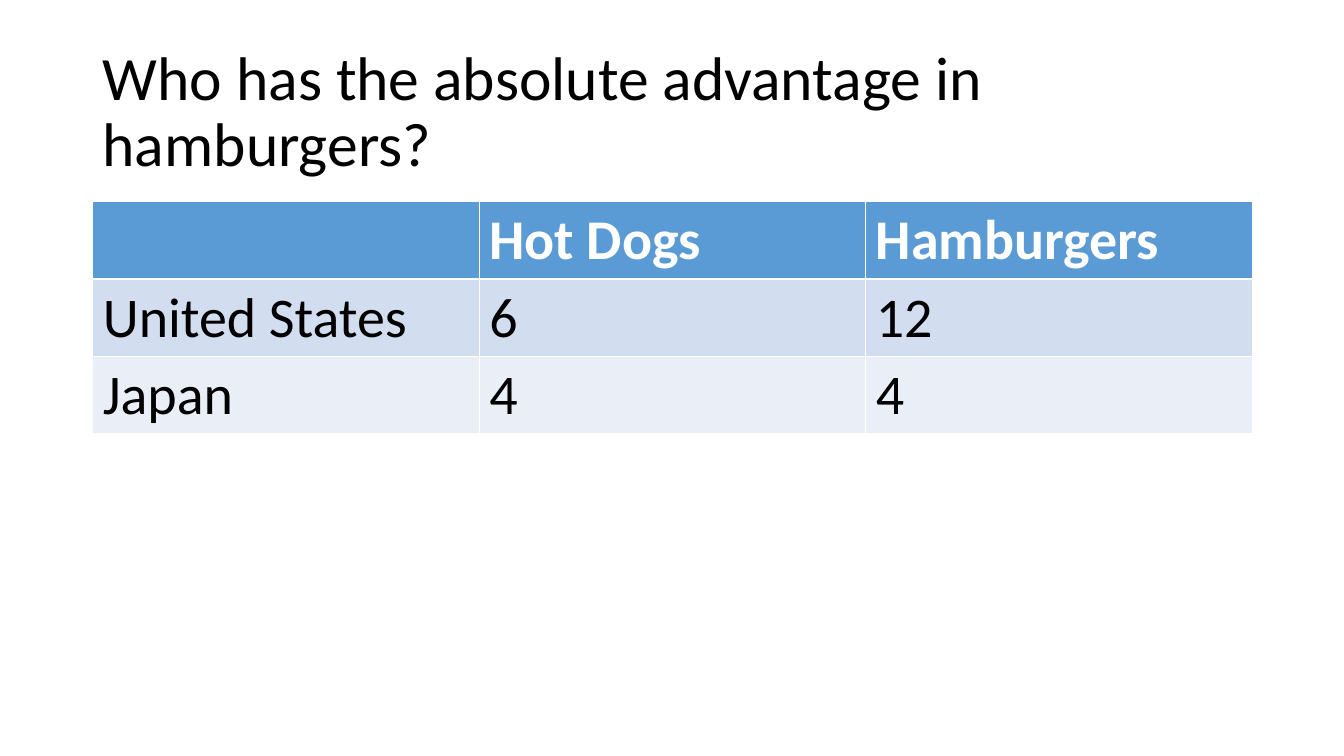
import pptx
import pptx.util
import pptx.dml.color
import pptx.enum.text

Inches = pptx.util.Inches


def color(code):
    return pptx.dml.color.RGBColor.from_string(code)


def style(para, size, code, bold=False):
    para.font.name = "Calibri"
    para.font.size = pptx.util.Pt(size)
    para.font.bold = bold
    para.font.color.rgb = color(code)


deck = pptx.Presentation()
deck.slide_width = Inches(13.33)
deck.slide_height = Inches(7.5)
slide = deck.slides.add_slide(deck.slide_layouts[6])

left, width = Inches(0.92), Inches(11.5)
title = slide.shapes.add_textbox(left, Inches(0.4), width, Inches(1.45)).text_frame
title.word_wrap = True
title.vertical_anchor = pptx.enum.text.MSO_ANCHOR.MIDDLE
para = title.paragraphs[0]
para.text = "Who has the absolute advantage in hamburgers?"
para.line_spacing = 0.9
style(para, 44, "000000")

rows = [
    ("5B9BD5", "FFFFFF", ["", "Hot Dogs", "Hamburgers"]),
    ("D2DEEF", "000000", ["United States", "6", "12"]),
    ("EAEFF7", "000000", ["Japan", "4", "4"]),
]
table = slide.shapes.add_table(3, 3, left, Inches(2), width, Inches(2.3)).table
for r, (fill, ink, words) in enumerate(rows):
    for c, word in enumerate(words):
        cell = table.cell(r, c)
        cell.fill.solid()
        cell.fill.fore_color.rgb = color(fill)
        cell.text = word
        style(cell.text_frame.paragraphs[0], 40, ink, r == 0)

deck.save("out.pptx")
